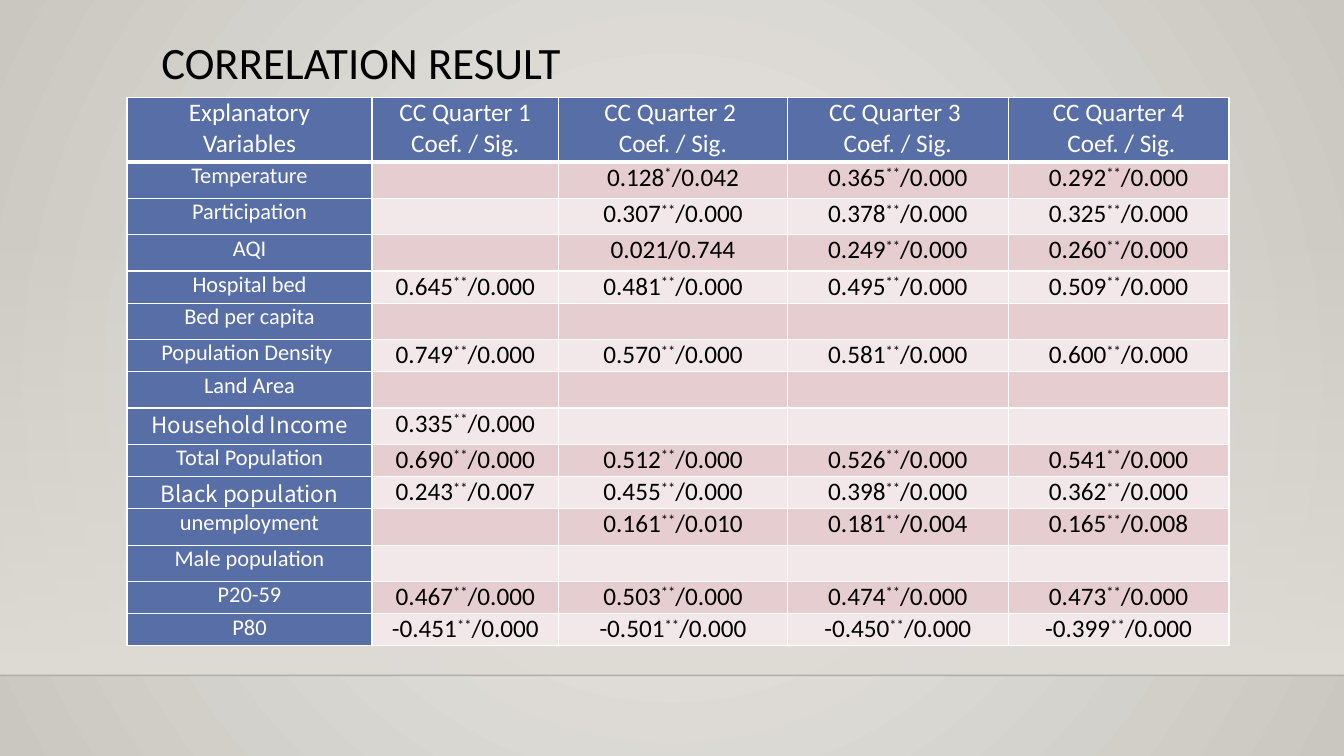
"""Build the correlation result slide with its table of coefficients."""
from dataclasses import dataclass

from lxml import etree
from pptx import Presentation
from pptx.dml.color import RGBColor
from pptx.enum.shapes import MSO_CONNECTOR, MSO_SHAPE
from pptx.enum.text import MSO_ANCHOR, PP_ALIGN
from pptx.oxml import parse_xml
from pptx.oxml.ns import nsdecls, qn
from pptx.slide import Slide
from pptx.table import _Cell
from pptx.text.text import _Paragraph
from pptx.util import Inches, Pt

CENTER, LEFT = PP_ALIGN.CENTER, PP_ALIGN.LEFT
TOP, MIDDLE = MSO_ANCHOR.TOP, MSO_ANCHOR.MIDDLE
RECTANGLE, STRAIGHT = MSO_SHAPE.RECTANGLE, MSO_CONNECTOR.STRAIGHT

BLACK = RGBColor(0x00, 0x00, 0x00)
WHITE = RGBColor(0xFF, 0xFF, 0xFF)
BLUE = RGBColor(0x58, 0x6E, 0xA6)
DARK_BAND = RGBColor(0xE6, 0xCD, 0xCF)
LIGHT_BAND = RGBColor(0xF3, 0xE8, 0xE9)
WALL_CENTER = RGBColor(0xEC, 0xEA, 0xE7)
WALL_EDGE = RGBColor(0xCA, 0xC7, 0xC1)
SHADE = RGBColor(0xDF, 0xDB, 0xD5)
FLOOR_LINE = RGBColor(0x00, 0x00, 0x01)

FONT = "Calibri"
WIDE_FONT = "Noto Sans CJK SC"
SLIDE_WIDTH, SLIDE_HEIGHT = 13.33, 7.5
SHADE_TOP, FLOOR_TOP = 2.21, 6.7
COLUMN_WIDTHS = (2.43, 1.85, 2.27, 2.19, 2.19)
HEADER_HEIGHT, FULL_ROW_HEIGHT, GAP_ROW_HEIGHT = 0.64, 0.32, 0.36
THIN, THICK = 1, 3

TITLE_FORMAT = {"size": Pt(32), "name": FONT}
HEADER_FORMAT = {"size": Pt(18), "name": FONT}
LABEL_FORMAT = {"size": Pt(16), "name": FONT}
WIDE_LABEL_FORMAT = {"size": Pt(16), "name": WIDE_FONT}
VALUE_FORMAT = {"size": Pt(18), "name": FONT}
CELL_MARGINS = {
    "margin_left": Inches(0.07), "margin_right": Inches(0.07),
    "margin_top": 0, "margin_bottom": 0, "vertical_anchor": TOP,
}


@dataclass(frozen=True)
class Variable:
    """An explanatory variable with its four quarterly results."""
    label: str
    results: tuple[str, str, str, str]
    label_format: dict


@dataclass(frozen=True)
class Stop:
    """A gradient stop, with position and opacity in percent."""
    position: int
    color: RGBColor
    opacity: int = 100


HEADERS = (
    "Explanatory\nVariables",
    "CC Quarter 1\nCoef. / Sig.",
    "CC Quarter 2 \nCoef. / Sig.",
    "CC Quarter 3 \nCoef. / Sig.",
    "CC Quarter 4\n Coef. / Sig.",
)
NO_RESULTS = ("", "", "", "")
VARIABLES = (
    Variable("Temperature", ("", "0.128*/0.042", "0.365**/0.000", "0.292**/0.000"), LABEL_FORMAT),
    Variable("Participation", ("", "0.307**/0.000", "0.378**/0.000", "0.325**/0.000"), LABEL_FORMAT),
    Variable("AQI", ("", "0.021/0.744", "0.249**/0.000", "0.260**/0.000"), LABEL_FORMAT),
    Variable("Hospital bed", ("0.645**/0.000", "0.481**/0.000", "0.495**/0.000", "0.509**/0.000"), LABEL_FORMAT),
    Variable("Bed per capita", NO_RESULTS, LABEL_FORMAT),
    Variable("Population Density ", ("0.749**/0.000", "0.570**/0.000", "0.581**/0.000", "0.600**/0.000"), LABEL_FORMAT),
    Variable("Land Area", NO_RESULTS, LABEL_FORMAT),
    Variable("Household Income", ("0.335**/0.000", "", "", ""), WIDE_LABEL_FORMAT),
    Variable("Total Population", ("0.690**/0.000", "0.512**/0.000", "0.526**/0.000", "0.541**/0.000"), LABEL_FORMAT),
    Variable("Black population", ("0.243**/0.007", "0.455**/0.000", "0.398**/0.000", "0.362**/0.000"), WIDE_LABEL_FORMAT),
    Variable("unemployment", ("", "0.161**/0.010", "0.181**/0.004", "0.165**/0.008"), LABEL_FORMAT),
    Variable("Male population", NO_RESULTS, LABEL_FORMAT),
    Variable("P20-59", ("0.467**/0.000", "0.503**/0.000", "0.474**/0.000", "0.473**/0.000"), LABEL_FORMAT),
    Variable("P80", ("-0.451**/0.000", "-0.501**/0.000", "-0.450**/0.000", "-0.399**/0.000"), LABEL_FORMAT),
)


def apply_format(target: object, values: dict) -> None:
    """Set each named attribute on the target."""
    for name, value in values.items():
        setattr(target, name, value)


def set_gradient(element: etree._Element, stops: tuple[Stop, ...], direction: str) -> None:
    """Replace the gradient fill inside an element."""
    stop_list = "".join(
        f'<a:gs pos="{stop.position * 1000}"><a:srgbClr val="{stop.color}">'
        f'<a:alpha val="{stop.opacity * 1000}"/></a:srgbClr></a:gs>'
        for stop in stops
    )
    gradient = parse_xml(
        f'<a:gradFill {nsdecls("a")} rotWithShape="1"><a:gsLst>{stop_list}</a:gsLst>{direction}</a:gradFill>'
    )
    current = element.find(".//" + qn("a:gradFill"))
    current.getparent().replace(current, gradient)


def draw_backdrop(slide: Slide) -> None:
    """Draw the radial wall, its shade and the floor line."""
    slide.background.fill.gradient()
    set_gradient(
        slide.element, (Stop(0, WALL_CENTER), Stop(100, WALL_EDGE)),
        '<a:path path="circle"><a:fillToRect l="50000" t="50000" r="50000" b="50000"/></a:path>',
    )
    shade = slide.shapes.add_shape(
        RECTANGLE, 0, Inches(SHADE_TOP), Inches(SLIDE_WIDTH), Inches(FLOOR_TOP - SHADE_TOP)
    )
    shade.shadow.inherit = False
    shade.line.fill.background()
    shade.fill.gradient()
    set_gradient(shade.element, (Stop(0, SHADE, 0), Stop(100, SHADE)), '<a:lin ang="5400000" scaled="0"/>')

    floor = slide.shapes.add_connector(
        STRAIGHT, 0, Inches(FLOOR_TOP), Inches(SLIDE_WIDTH), Inches(FLOOR_TOP)
    )
    floor.line.width = Pt(1)
    floor.line.color.rgb = FLOOR_LINE
    color = floor.element.spPr.find(".//" + qn("a:srgbClr"))
    etree.SubElement(color, qn("a:alpha"), val="20000")
    etree.SubElement(floor.element.spPr, qn("a:effectLst"))


def draw_title(slide: Slide) -> None:
    """Place and format the slide title."""
    title = slide.shapes.title
    title.left, title.top, title.width, title.height = map(Inches, (1.5, 0.32, 5.34, 0.64))
    frame = title.text_frame
    frame.text = "CORRELATION RESULT"
    frame.vertical_anchor = MIDDLE
    paragraph = frame.paragraphs[0]
    paragraph.alignment = LEFT
    paragraph.line_spacing = 0.9
    apply_format(paragraph.font, TITLE_FORMAT)
    paragraph.font.color.rgb = BLACK


def add_result(paragraph: _Paragraph, result: str) -> None:
    """Write a coefficient, raised stars and significance as runs."""
    coefficient, slash, significance = result.partition("/")
    number = coefficient.rstrip("*")
    stars = coefficient[len(number):]
    parts = (number, stars, slash + significance) if stars else (result,)
    for part in parts:
        run = paragraph.add_run()
        run.text = part
        apply_format(run.font, VALUE_FORMAT)
        run.font.color.rgb = BLACK
        if part == stars:
            run._r.get_or_add_rPr().set("baseline", "30000")


def style_cell(cell: _Cell, fill: RGBColor, top: int = THIN, bottom: int = THIN) -> None:
    """Set the margins, fill and white borders of a cell."""
    apply_format(cell, CELL_MARGINS)
    cell.fill.solid()
    cell.fill.fore_color.rgb = fill
    properties = cell._tc.get_or_add_tcPr()
    for index, (side, width) in enumerate((("L", THIN), ("R", THIN), ("T", top), ("B", bottom))):
        properties.insert(index, parse_xml(
            f'<a:ln{side} {nsdecls("a")} w="{Pt(width)}"><a:solidFill>'
            f'<a:srgbClr val="{WHITE}"/></a:solidFill></a:ln{side}>'
        ))


def write_label(cell: _Cell, text: str, font_format: dict) -> None:
    """Write centred white text, one paragraph a line."""
    cell.text = text
    for paragraph in cell.text_frame.paragraphs:
        paragraph.alignment = CENTER
        for run in paragraph.runs:
            apply_format(run.font, font_format)
            run.font.color.rgb = WHITE


def draw_table(slide: Slide) -> None:
    """Draw the table of results by variable and quarter."""
    heights = [HEADER_HEIGHT] + [
        FULL_ROW_HEIGHT if all(variable.results) else GAP_ROW_HEIGHT for variable in VARIABLES
    ]
    table = slide.shapes.add_table(
        len(heights), len(COLUMN_WIDTHS), Inches(1.26), Inches(0.97),
        Inches(sum(COLUMN_WIDTHS)), Inches(sum(heights)),
    ).table
    for column, width in zip(table.columns, COLUMN_WIDTHS):
        column.width = Inches(width)
    for row, height in zip(table.rows, heights):
        row.height = Inches(height)
    for column_index, header in enumerate(HEADERS):
        cell = table.cell(0, column_index)
        style_cell(cell, BLUE, bottom=THICK)
        write_label(cell, header, HEADER_FORMAT)
    for row_index, variable in enumerate(VARIABLES, start=1):
        top = THICK if row_index == 1 else THIN
        band = DARK_BAND if row_index % 2 else LIGHT_BAND
        label_cell = table.cell(row_index, 0)
        style_cell(label_cell, BLUE, top)
        write_label(label_cell, variable.label, variable.label_format)
        for column_index, result in enumerate(variable.results, start=1):
            cell = table.cell(row_index, column_index)
            style_cell(cell, band, top)
            paragraph = cell.text_frame.paragraphs[0]
            paragraph.alignment = CENTER
            if result:
                add_result(paragraph, result)


def main() -> None:
    """Build and save the presentation."""
    presentation = Presentation()
    presentation.slide_width = Inches(SLIDE_WIDTH)
    presentation.slide_height = Inches(SLIDE_HEIGHT)
    slide = presentation.slides.add_slide(presentation.slide_layouts[5])
    draw_backdrop(slide)
    draw_title(slide)
    draw_table(slide)
    presentation.save("out.pptx")


if __name__ == "__main__":
    main()
